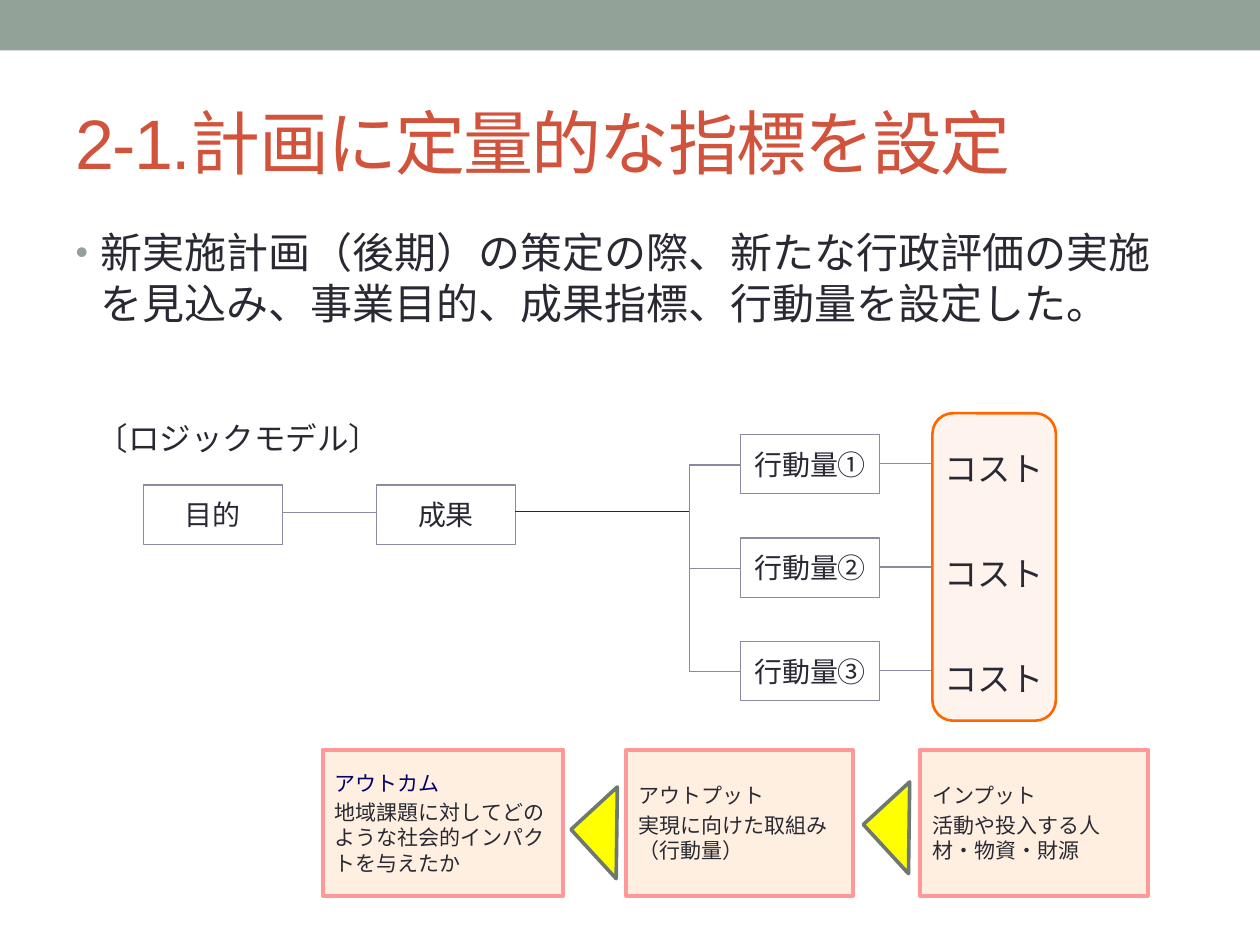
import pptx
import pptx.dml.color
import pptx.enum.shapes
import pptx.enum.text
import pptx.oxml
import pptx.oxml.ns
import pptx.util
from pptx.util import Inches

COLOURS = {
    "band": "93A299", "title": "D2533C", "ink": "292934", "navy": "000066",
    "rule": "8A8AA3", "peach": "FFCC99", "pink": "FF9999",
    "orange": "FF6600", "yellow": "FFFF00", "edge": "6D7871",
}
GOTHIC = "Noto Sans CJK JP"
SHAPES = pptx.enum.shapes.MSO_SHAPE
ALIGN = pptx.enum.text.PP_ALIGN
MIDDLE = pptx.enum.text.MSO_ANCHOR.MIDDLE
TOP = pptx.enum.text.MSO_ANCHOR.TOP
NO_FIT = pptx.enum.text.MSO_AUTO_SIZE.NONE


def colour(name):
    return pptx.dml.color.RGBColor.from_string(COLOURS[name])


def xml(tag, **attributes):
    element = pptx.oxml.parse_xml(
        f'<a:{tag} xmlns:a="http://schemas.openxmlformats.org/drawingml/2006/main"/>')
    for key, value in attributes.items():
        element.set(key, str(value))
    return element


def apply(target, formats):
    for key, value in formats.items():
        setattr(target, key, value)


def write(frame, lines, size, font=GOTHIC, ink="ink", frame_format=None, **paragraph_format):
    apply(frame, {"word_wrap": True, "vertical_anchor": MIDDLE, "auto_size": NO_FIT,
                  **(frame_format or {})})
    for index, line in enumerate(lines):
        paragraph = frame.paragraphs[0] if index == 0 else frame.add_paragraph()
        apply(paragraph, {"alignment": ALIGN.LEFT, **paragraph_format})
        run = paragraph.add_run()
        run.text = line
        apply(run.font, {"size": pptx.util.Pt(size), "name": font})
        run.font.color.rgb = colour(ink)
        run.font._element.find(pptx.oxml.ns.qn("a:latin")).addnext(xml("ea", typeface=GOTHIC))


def add_box(slide, box, kind=SHAPES.RECTANGLE, fill=None, opacity=100, line=None, width=0.75):
    shape = slide.shapes.add_shape(kind, *map(Inches, box))
    shape.shadow.inherit = False
    if fill:
        shape.fill.solid()
        shape.fill.fore_color.rgb = colour(fill)
        if opacity < 100:
            tint = shape.fill._xPr.find(".//" + pptx.oxml.ns.qn("a:srgbClr"))
            tint.append(xml("alpha", val=opacity * 1000))
    else:
        shape.fill.background()
    if line:
        shape.line.color.rgb = colour(line)
        shape.line.width = pptx.util.Pt(width)
    else:
        shape.line.fill.background()
    return shape


def add_line(slide, x1, y1, x2, y2, ink="rule"):
    link = slide.shapes.add_connector(
        pptx.enum.shapes.MSO_CONNECTOR.STRAIGHT, *map(Inches, (x1, y1, x2, y2)))
    link.line.color.rgb = colour(ink)
    link.line.width = pptx.util.Pt(0.75)
    link._element.spPr.append(xml("effectLst"))


def place(placeholder, box):
    apply(placeholder, dict(zip(("left", "top", "width", "height"), map(Inches, box))))


def heading(slide, box):
    title = slide.shapes.title
    place(title, box)
    write(title.text_frame, ["2-1.計画に定量的な指標を設定"], 40, "Arial", "title")
    title.text_frame.paragraphs[0].runs[0].font._element.set("spc", "-100")


def summary(slide, box):
    body = slide.placeholders[1]
    place(body, box)
    write(body.text_frame,
          ["新実施計画（後期）の策定の際、新たな行政評価の実施を見込み、事業目的、成果指標、行動量を設定した。"],
          24, "Arial", frame_format={"vertical_anchor": TOP}, space_before=pptx.util.Pt(4.8))
    properties = body.text_frame.paragraphs[0]._p.get_or_add_pPr()
    properties.set("marL", str(Inches(0.2)))
    properties.set("indent", str(Inches(-0.2)))
    bullet_colour = xml("buClr")
    bullet_colour.append(xml("srgbClr", val=COLOURS["band"]))
    for part in (bullet_colour, xml("buSzPct", val=85000),
                 xml("buFont", typeface="Arial"), xml("buChar", char="•")):
        properties.append(part)


def model_step(slide, label, left, top):
    step = add_box(slide, (left, top, 1.1, 0.47), line="rule")
    write(step.text_frame, [label], 16, alignment=ALIGN.CENTER, space_before=pptx.util.Pt(3.2))


def logic_model(slide, box):
    left, top, width, height = box
    trunk, actions, cost = left + 4.8, left + 5.21, left + 6.73
    caption = slide.shapes.add_textbox(*map(Inches, (left, top, 2.68, 0.4)))
    write(caption.text_frame, ["〔ロジックモデル〕"], 18, frame_format={"vertical_anchor": TOP})

    goal, result, row = left + 0.47, left + 2.32, top + 0.57
    model_step(slide, "目的", goal, row)
    model_step(slide, "成果", result, row)
    add_line(slide, goal + 1.1, row + 0.22, result, row + 0.22)
    add_line(slide, result + 1.1, row + 0.21, trunk, row + 0.21, "ink")

    for index, number in enumerate("①②③"):
        action_top = top + 0.17 + 0.82 * index
        middle = action_top + 0.24
        model_step(slide, "行動量" + number, actions, action_top)
        add_line(slide, trunk, middle, actions, middle)
        add_line(slide, actions + 1.1, middle - 0.01, cost, middle - 0.01)
    add_line(slide, trunk, top + 0.4, trunk, top + 2.05)

    costs = add_box(slide, (cost, top, width - 6.73, height), SHAPES.ROUNDED_RECTANGLE,
                    "orange", 7, "orange", 1.5)
    write(costs.text_frame, ["コスト"] * 3, 19, "Arial", frame_format={"word_wrap": False},
          alignment=ALIGN.CENTER, line_spacing=pptx.util.Pt(30), space_before=pptx.util.Pt(30))
    costs.text_frame.paragraphs[0].space_before = pptx.util.Pt(0)


def stages(slide, box):
    left, top, width, height = box
    cards = [
        (0, 1.91, "アウトカム", "地域課題に対してどのような社会的インパクトを与えたか", "navy"),
        (2.41, 1.8, "アウトプット", "実現に向けた取組み（行動量）", "ink"),
        (width - 1.81, 1.81, "インプット", "活動や投入する人材・物資・財源", "ink"),
    ]
    for offset, card_width, name, meaning, name_ink in cards:
        card = add_box(slide, (left + offset, top, card_width, height),
                       fill="peach", opacity=30, line="pink", width=2.25)
        write(card.text_frame, [name, meaning], 12, space_before=pptx.util.Pt(2.4))
        card.text_frame.paragraphs[0].runs[0].font.color.rgb = colour(name_ink)
    for offset, drop in ((2.07, 0.41), (4.39, 0.37)):
        arrow = add_box(slide, (left + offset, top + drop, 0.53, 0.5),
                        SHAPES.RIGHT_TRIANGLE, "yellow", line="edge", width=2.08)
        arrow.rotation = 47.4


def main():
    deck = pptx.Presentation()
    apply(deck, {"slide_width": Inches(10), "slide_height": Inches(7.5)})
    slide = deck.slides.add_slide(deck.slide_layouts[1])
    add_box(slide, (0, 0, 10, 0.4), fill="band")
    heading(slide, (0.5, 0.58, 9, 1.08))
    summary(slide, (0.5, 1.75, 9, 5.33))
    stages(slide, (2.56, 5.95, 6.55, 1.16))
    logic_model(slide, (0.67, 3.28, 7.71, 2.44))
    deck.save("out.pptx")


if __name__ == "__main__":
    main()
